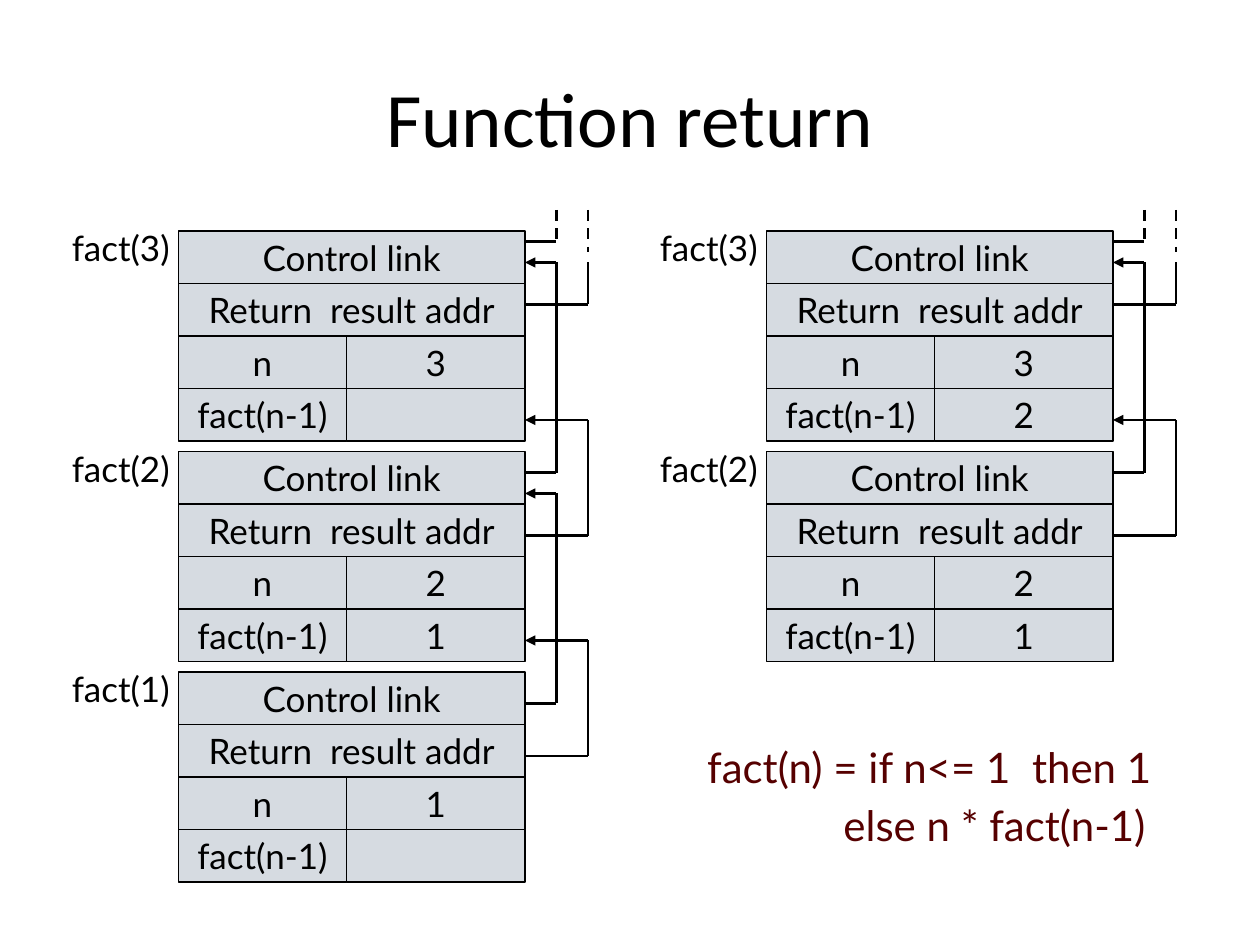
from lxml import etree
from pptx import Presentation
from pptx.dml.color import RGBColor
from pptx.enum.dml import MSO_LINE
from pptx.enum.shapes import MSO_CONNECTOR, MSO_SHAPE
from pptx.enum.text import MSO_ANCHOR, PP_ALIGN
from pptx.oxml.ns import qn
from pptx.util import Cm, Pt

CENTER = PP_ALIGN.CENTER
MIDDLE = MSO_ANCHOR.MIDDLE
RECT = MSO_SHAPE.RECTANGLE
STRAIGHT = MSO_CONNECTOR.STRAIGHT
DASH = MSO_LINE.DASH

BLACK, CELL_FILL, MAROON = "000000", "D6DBE1", "560000"
GRID = 2.54 / 12
ROW, NAME_W, VALUE_W = 5, 16, 17
FRAME_W = NAME_W + VALUE_W
FRAME_PITCH, CONTROL_PITCH = 21, 22
CONTROL_LANE, RETURN_LANE = 3, 6


def grid(n):
    """Return the length of n grid steps of a twelfth of an inch."""
    return Cm(n * GRID)


def color(hex_string):
    """Return the colour for a hex string."""
    return RGBColor.from_string(hex_string)


def add_run(p, text, size, hex_color=BLACK, font="Lato"):
    """Add a centred, formatted run to a paragraph."""
    p.alignment = CENTER
    r = p.add_run()
    r.text = text
    r.font.size = Pt(size)
    r.font.name = font
    r.font.color.rgb = color(hex_color)


def add_cell(s, x, y, w, text):
    """Draw one cell of an activation record."""
    sp = s.shapes.add_shape(RECT, grid(x), grid(y), grid(w), grid(ROW))
    sp.shadow.inherit = False
    sp.fill.solid()
    sp.fill.fore_color.rgb = color(CELL_FILL)
    sp.line.color.rgb = color(BLACK)
    sp.line.width = Pt(0.75)
    tf = sp.text_frame
    tf.word_wrap = False
    tf.vertical_anchor = MIDDLE
    if text:
        add_run(tf.paragraphs[0], text, 20)


def add_line(s, x1, y1, x2, y2, dashed=False, arrow=False):
    """Draw a straight line, with an optional arrowhead at its end."""
    c = s.shapes.add_connector(STRAIGHT, grid(x1), grid(y1), grid(x2), grid(y2))
    c.line.color.rgb = color(BLACK)
    c.line.width = Pt(1.5)
    if dashed:
        c.line.dash_style = DASH
    if arrow:
        etree.SubElement(c.line._get_or_add_ln(), qn("a:tailEnd"), type="triangle")
    etree.SubElement(c._element.spPr, qn("a:effectLst"))


def add_frame(s, x, y, n, result):
    """Draw the activation record of fact(n) with its label."""
    sp = s.shapes.add_textbox(grid(x - 13), grid(y - 1), grid(15), Cm(1.1))
    tf = sp.text_frame
    tf.word_wrap = True
    add_run(tf.paragraphs[0], f"fact({n})", 20)

    add_cell(s, x, y, FRAME_W, "Control link")
    add_cell(s, x, y + ROW, FRAME_W, "Return  result addr")
    for i, (name, value) in enumerate([("n", str(n)), ("fact(n-1)", result)], 2):
        add_cell(s, x, y + i * ROW, NAME_W, name)
        add_cell(s, x + NAME_W, y + i * ROW, VALUE_W, value)


def add_caller_links(s, x, y):
    """Draw the links that leave the first record upwards."""
    control, back = x + CONTROL_LANE, x + RETURN_LANE
    add_line(s, x, y + 1, control, y + 1)
    add_line(s, control, y - 2, control, y + 1, dashed=True)
    add_line(s, x, y + 7, back, y + 7)
    add_line(s, back, y - 2, back, y + 2, dashed=True)
    add_line(s, back, y + 3, back, y + 7)


def add_link(s, x, lane, start, end):
    """Draw a link from one height on a record's edge up to another."""
    add_line(s, x, start, x + lane, start)
    add_line(s, x + lane, end, x + lane, start)
    add_line(s, x + lane, end, x, end, arrow=True)


def add_stack(s, x, y, frames):
    """Draw a stack of activation records and the links between them."""
    edge = x + FRAME_W
    for i, (n, result) in enumerate(frames):
        add_frame(s, x, y + i * FRAME_PITCH, n, result)
    add_caller_links(s, edge, y)
    for i in range(len(frames) - 1):
        top = y + i * CONTROL_PITCH
        add_link(s, edge, CONTROL_LANE, top + 23, top + 3)
        top = y + i * FRAME_PITCH
        add_link(s, edge, RETURN_LANE, top + 29, top + 18)


def add_title(s, text):
    """Fill and place the title placeholder."""
    sp = s.shapes.title
    sp.left, sp.top, sp.width, sp.height = Cm(1.27), Cm(0.76), Cm(22.86), Cm(3.18)
    tf = sp.text_frame
    tf.vertical_anchor = MIDDLE
    add_run(tf.paragraphs[0], text, 44, font="Calibri")


def add_definition(s, x, y, lines):
    """Write the function definition, one indented paragraph a line."""
    sp = s.shapes.add_textbox(grid(x), grid(y), grid(55), grid(13))
    tf = sp.text_frame
    tf.word_wrap = True
    for i, (text, indent) in enumerate(lines):
        p = tf.add_paragraph() if i else tf.paragraphs[0]
        p.space_before = Pt(4.8 if i else 0)
        p._p.get_or_add_pPr().set("marL", str(Cm(indent)))
        add_run(p, text, 24, MAROON)


def main():
    """Build the slide and save it."""
    prs = Presentation()
    prs.slide_width, prs.slide_height = Cm(25.4), Cm(19.05)
    s = prs.slides.add_slide(prs.slide_layouts[5])
    add_title(s, "Function return")
    add_stack(s, 17, 22, [(3, ""), (2, "1"), (1, "")])
    add_stack(s, 73, 22, [(3, "2"), (2, "1")])
    add_definition(s, 58, 70, [
        ("fact(n) = if n<= 1  then 1", 1.27),
        ("else n * fact(n-1)", 3.9),
    ])
    prs.save("out.pptx")


if __name__ == "__main__":
    main()
